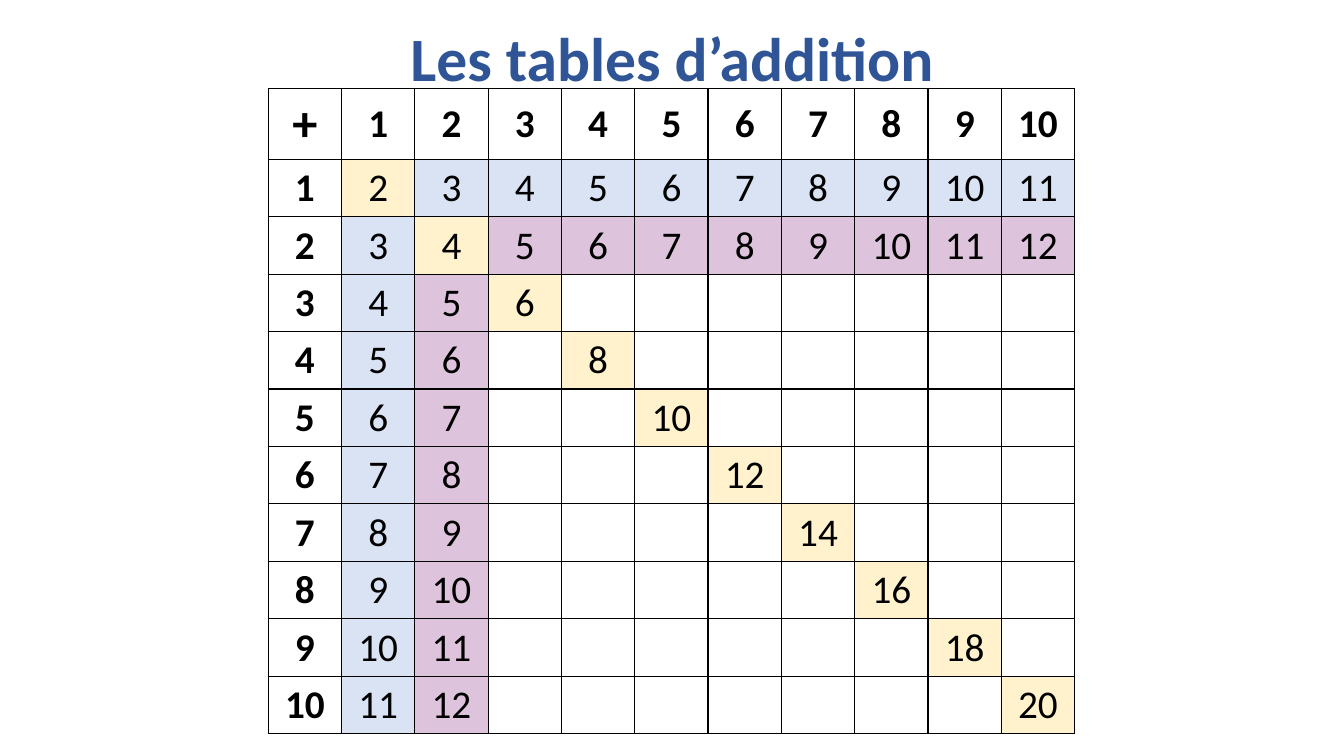
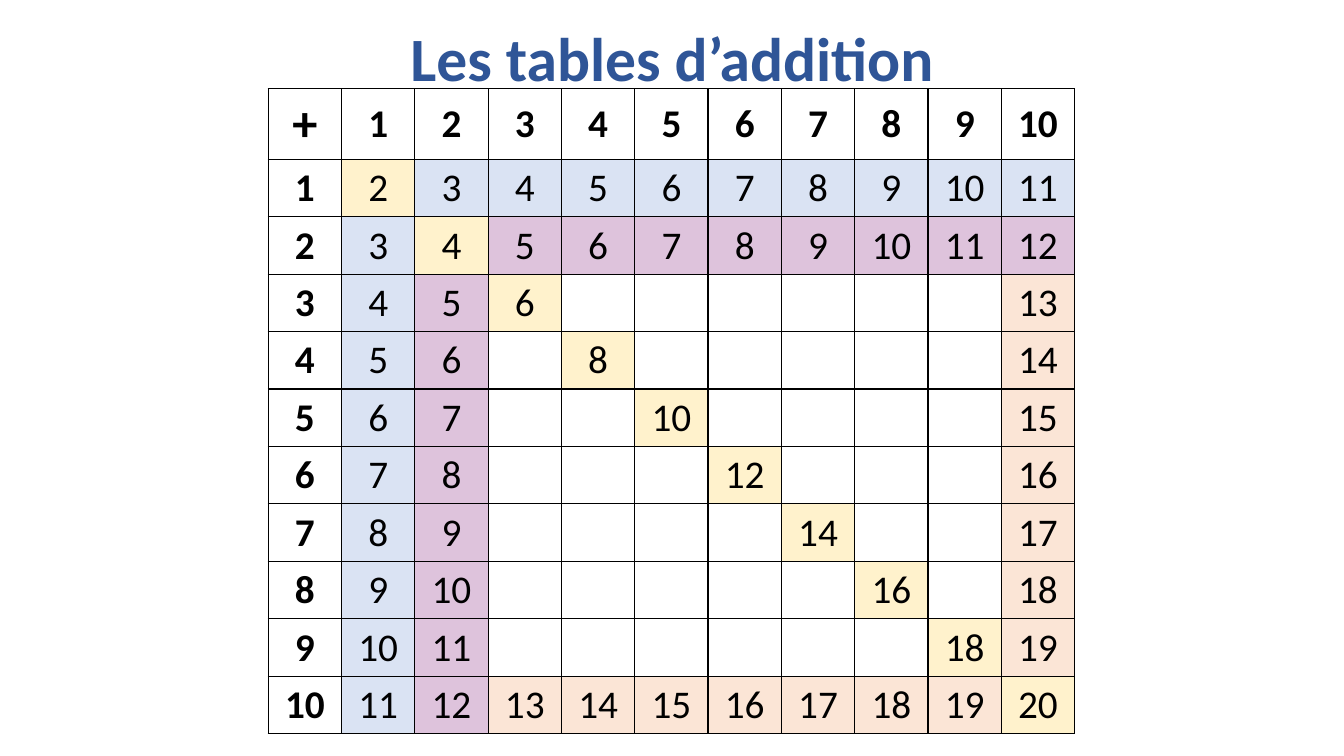
from dataclasses import dataclass

from lxml import etree
from pptx import Presentation
from pptx.dml.color import RGBColor
from pptx.enum import text
from pptx.oxml import ns
from pptx.util import Inches, Pt


@dataclass(frozen=True)
class Theme:
    font: str = "Calibri"
    title_color: str = "2F5597"
    ink: str = "000000"
    header: str = "FFFFFF"
    doubles: str = "FFF2CC"
    ones: str = "DAE3F3"
    twos: str = "DEC3DC"
    tens: str = "FBE5D6"
    title_size: int = 44
    plus_size: int = 36
    number_size: int = 28
    border_width: int = 1


theme = Theme()


def write(frame, content, size, color, bold):
    paragraph = frame.paragraphs[0]
    paragraph.text = content
    paragraph.alignment = text.PP_ALIGN.CENTER
    paragraph.font.name = theme.font
    paragraph.font.size = Pt(size)
    paragraph.font.bold = bold
    paragraph.font.color.rgb = RGBColor.from_string(color)
    return paragraph


def add_borders(cell):
    properties = cell._tc.get_or_add_tcPr()
    for position, side in enumerate(("lnL", "lnR", "lnT", "lnB")):
        line = etree.Element(ns.qn(f"a:{side}"), w=str(Pt(theme.border_width)))
        fill = etree.SubElement(line, ns.qn("a:solidFill"))
        etree.SubElement(fill, ns.qn("a:srgbClr"), val=theme.ink)
        properties.insert(position, line)


presentation = Presentation()
presentation.slide_width = Inches(13.33)
presentation.slide_height = Inches(7.5)
blank_layout = presentation.slide_layouts[6]

LAST = 10
COUNT = LAST + 1

# Tables already filled in on each slide
first_tables = {1: theme.ones, 2: theme.twos}
slide_tables = [first_tables, {**first_tables, LAST: theme.tens}]

for known_tables in slide_tables:
    slide = presentation.slides.add_slide(blank_layout)

    # Title
    title = slide.shapes.add_textbox(
        Inches(0.92), Inches(-0.11), Inches(11.5), Inches(1.45))
    title.text_frame.word_wrap = True
    title.text_frame.vertical_anchor = text.MSO_ANCHOR.MIDDLE
    heading = write(title.text_frame, "Les tables d’addition",
                    theme.title_size, theme.title_color, True)
    heading.line_spacing = 0.9

    # Addition grid
    table = slide.shapes.add_table(
        COUNT, COUNT, Inches(2.66), Inches(0.88), Inches(8), Inches(6.4)).table
    table.first_row = table.horz_banding = False
    for column in table.columns:
        column.width = Inches(8 / COUNT)
    for index, row in enumerate(table.rows):
        row.height = Inches(0.57 if index else 0.7)

    # Headers, doubles and known sums
    for i in range(COUNT):
        for j in range(COUNT):
            cell = table.cell(i, j)
            cell.vertical_anchor = text.MSO_ANCHOR.MIDDLE
            is_header = i == 0 or j == 0
            if is_header:
                color = theme.header
            elif i == j:
                color = theme.doubles
            else:
                color = known_tables.get(min(i, j)) or known_tables.get(max(i, j))

            if color:
                cell.fill.solid()
                cell.fill.fore_color.rgb = RGBColor.from_string(color)
                is_corner = i == j == 0
                write(cell.text_frame, "+" if is_corner else str(i + j),
                      theme.plus_size if is_corner else theme.number_size,
                      theme.ink, is_header)
            else:
                cell.fill.background()
            add_borders(cell)

presentation.save("out.pptx")
